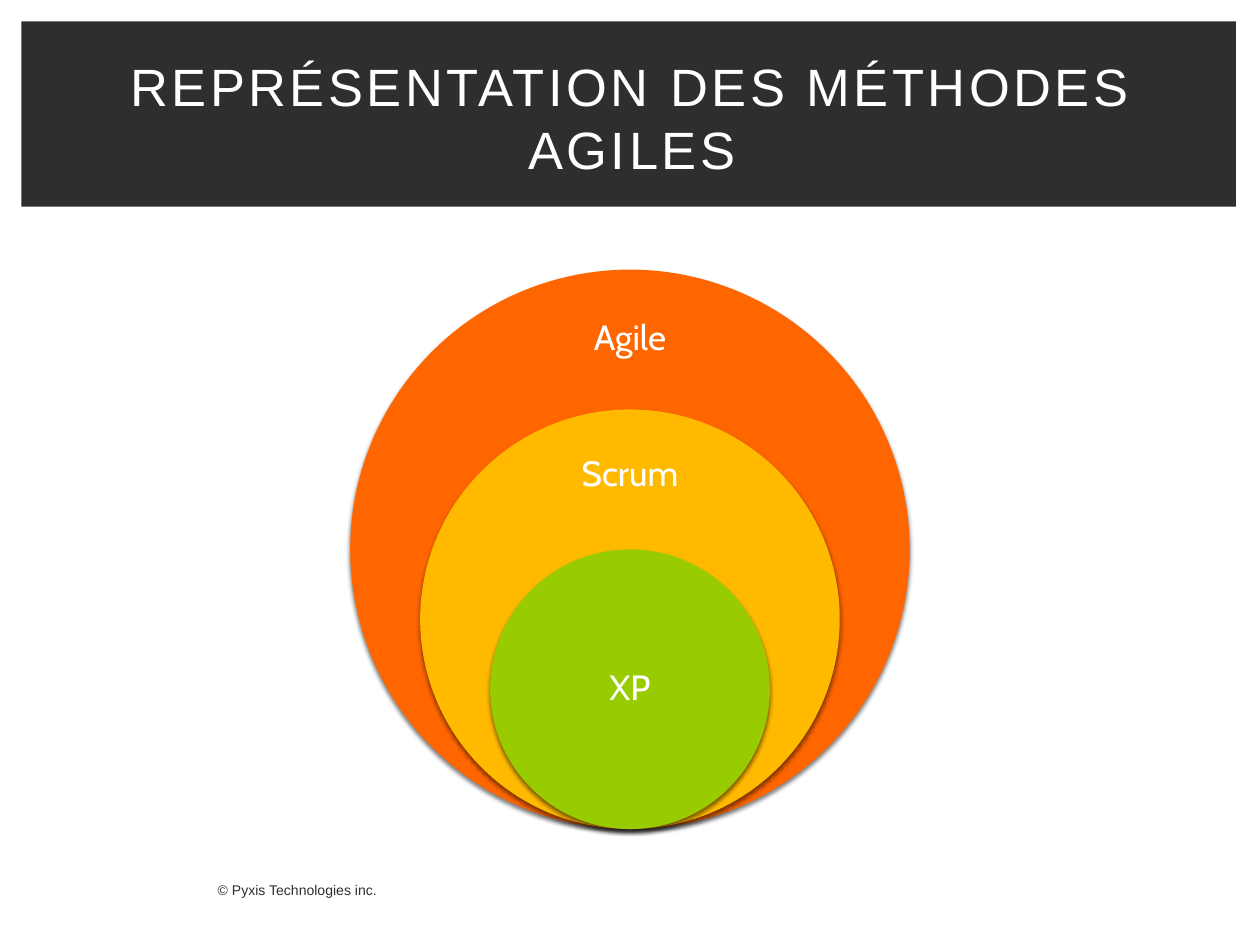
from lxml import etree
from pptx import Presentation
from pptx.dml.color import RGBColor
from pptx.enum.shapes import MSO_SHAPE
from pptx.enum.text import MSO_ANCHOR, MSO_AUTO_SIZE, PP_ALIGN
from pptx.oxml.ns import qn
from pptx.util import Inches, Pt

RECTANGLE, OVAL = MSO_SHAPE.RECTANGLE, MSO_SHAPE.OVAL
MIDDLE, CENTER = MSO_ANCHOR.MIDDLE, PP_ALIGN.CENTER
NO_FIT = MSO_AUTO_SIZE.NONE

WIDTH, HEIGHT = 10, 7.5
COLORS = {
    "dark": "2D2E2F",
    "white": "FFFFFF",
    "agile": "FF6600",
    "scrum": "FFBA00",
    "xp": "99CC00",
    "shadow": "000000",
}
METHODS = [
    ("Agile", "agile", 1, 0.05, 0.15),
    ("Scrum", "scrum", 0.75, 0.0625, 0.1875),
    ("XP", "xp", 0.5, 0.25, 0.5),
]


def inches(box):
    return [Inches(length) for length in box]


def paint(shape, color):
    shape.shadow.inherit = False
    shape.fill.solid()
    shape.fill.fore_color.rgb = RGBColor.from_string(COLORS[color])
    shape.line.fill.background()


def style(paragraph, font_name, size, color):
    paragraph.font.name = font_name
    paragraph.font.size = Pt(size)
    paragraph.font.color.rgb = RGBColor.from_string(COLORS[color])


def cast_shadow(shape):
    effects = shape._element.spPr.find(qn("a:effectLst"))
    shadow = etree.SubElement(
        effects, qn("a:outerShdw"), blurRad=str(Pt(2.5)), dist=str(Pt(2)),
        dir="5400000", algn="ctr", rotWithShape="0")
    tint = etree.SubElement(shadow, qn("a:srgbClr"), val=COLORS["shadow"])
    etree.SubElement(tint, qn("a:alpha"), val="50000")


def add_heading(slide, box, text):
    left, top, width, height = box
    band = slide.shapes.add_shape(RECTANGLE, *inches(box))
    paint(band, "dark")
    title = slide.shapes.title
    title._element.addprevious(band._element)
    title.left, title.top, title.width, title.height = inches(
        (left + 0.24, top + 0.06, width - 0.43, height - 0.07))
    frame = title.text_frame
    frame.text = text
    frame.word_wrap = True
    frame.auto_size = NO_FIT
    frame.vertical_anchor = MIDDLE
    heading = frame.paragraphs[0]
    heading.alignment = CENTER
    style(heading, "Arial", 30, "white")
    heading.runs[0]._r.get_or_add_rPr().set("spc", "200")


def add_nested_circles(slide, box, methods):
    left, top, size, _ = box
    center, bottom = left + size / 2, top + size
    label_width = size * 0.35
    nest = slide.shapes.add_group_shape()
    for name, color, scale, label_top, label_height in methods:
        diameter = size * scale
        circle_top = bottom - diameter
        circle = nest.shapes.add_shape(OVAL, *inches(
            (center - diameter / 2, circle_top, diameter, diameter)))
        paint(circle, color)
        cast_shadow(circle)
        label = nest.shapes.add_textbox(*inches(
            (center - label_width / 2, circle_top + diameter * label_top,
             label_width, diameter * label_height)))
        frame = label.text_frame
        frame.text = name
        frame.word_wrap = True
        frame.vertical_anchor = MIDDLE
        frame.margin_left = frame.margin_right = Inches(0.16)
        frame.margin_top = frame.margin_bottom = Inches(0.16)
        caption = frame.paragraphs[0]
        caption.alignment = CENTER
        caption.line_spacing = 0.9
        style(caption, "Cabin", 20, "white")


def add_copyright(slide, box, text):
    notice = slide.shapes.add_textbox(*inches(box))
    notice.text_frame.text = text
    notice.text_frame.word_wrap = False
    style(notice.text_frame.paragraphs[0], "Arial", 8, "dark")


def main():
    deck = Presentation()
    deck.slide_width, deck.slide_height = Inches(WIDTH), Inches(HEIGHT)
    slide = deck.slides.add_slide(deck.slide_layouts[5])
    margin = 0.17
    diameter = 4.44
    add_heading(slide, (margin, margin, WIDTH * 0.964, HEIGHT * 0.196),
                "REPRÉSENTATION DES MÉTHODES AGILES")
    add_copyright(slide, (1.63, 6.95, 1.53, 0.24), "© Pyxis Technologies inc.")
    add_nested_circles(
        slide, ((WIDTH - diameter) / 2, 2.14, diameter, diameter), METHODS)
    deck.save("out.pptx")


if __name__ == "__main__":
    main()
